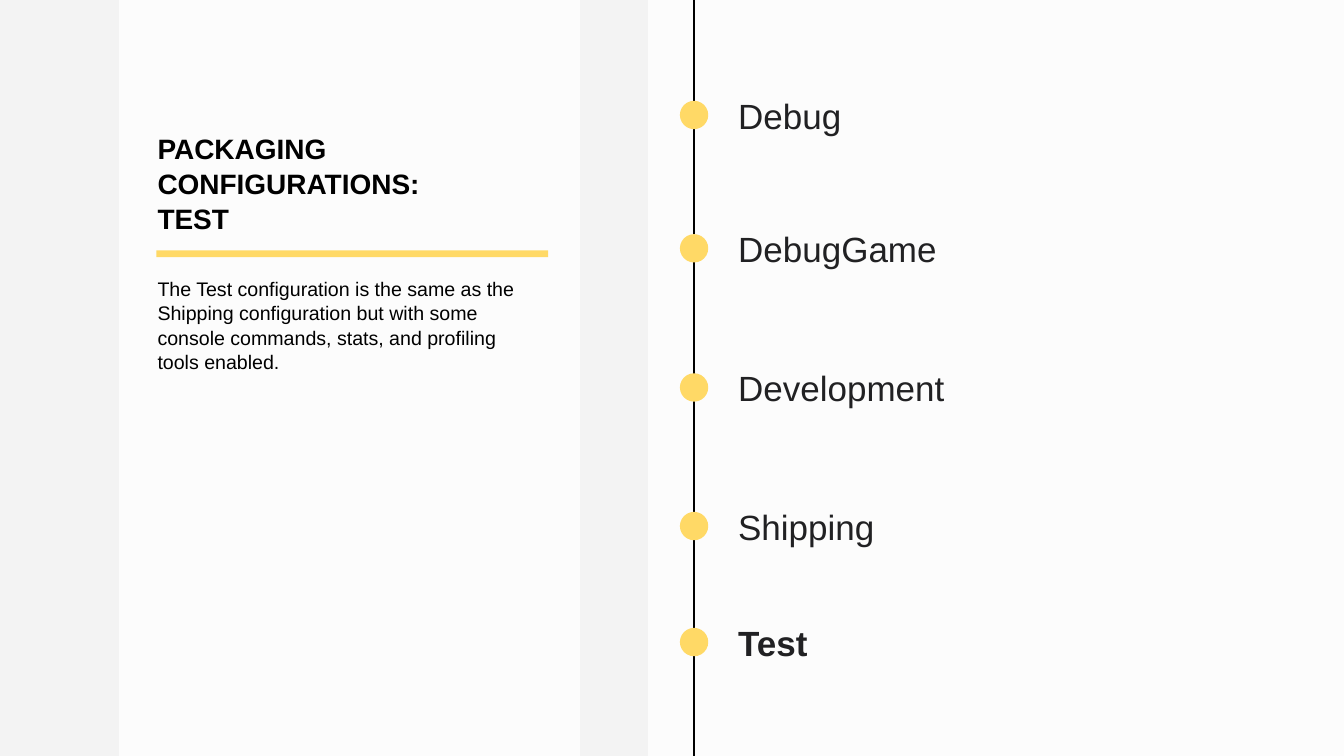
from lxml import etree
from pptx import Presentation
from pptx.dml.color import RGBColor
from pptx.enum.shapes import MSO_CONNECTOR, MSO_SHAPE
from pptx.enum.text import MSO_ANCHOR, MSO_AUTO_SIZE, PP_ALIGN
from pptx.oxml.ns import qn
from pptx.util import Emu, Pt

EMU_PER_PX = 9525
SLIDE_WIDTH, SLIDE_HEIGHT = 2560, 1440
RECTANGLE, OVAL = MSO_SHAPE.RECTANGLE, MSO_SHAPE.OVAL
STRAIGHT = MSO_CONNECTOR.STRAIGHT
TOP, MIDDLE, BOTTOM = MSO_ANCHOR.TOP, MSO_ANCHOR.MIDDLE, MSO_ANCHOR.BOTTOM
NO_AUTOFIT = MSO_AUTO_SIZE.NONE
LEFT = PP_ALIGN.LEFT

BACKGROUND = RGBColor(0xF3, 0xF3, 0xF3)
WHITE = RGBColor(0xFF, 0xFF, 0xFF)
BLACK = RGBColor(0x00, 0x00, 0x00)
CHARCOAL = RGBColor(0x21, 0x21, 0x23)
YELLOW = RGBColor(0xFF, 0xD9, 0x66)

FONT = "Arial"
INSET = 6
PANEL_OPACITY = 80
TIMELINE_X = 1322
DOT_SIZE = 54
LABEL_LEFT, LABEL_WIDTH, LABEL_HEIGHT = 1400, 870, 91

TITLE_LINES = ["PACKAGING CONFIGURATIONS:", "TEST"]
DESCRIPTION = (
    "The Test configuration is the same as the Shipping configuration but "
    "with some console commands, stats, and profiling tools enabled."
)
CONFIGURATIONS = [
    ("Debug", 219),
    ("DebugGame", 473),
    ("Development", 738),
    ("Shipping", 1002),
    ("Test", 1223),
]
CURRENT_CONFIGURATION = "Test"


def px(length):
    return Emu(length * EMU_PER_PX)


def set_attributes(target, values):
    for name, value in values.items():
        setattr(target, name, value)


def place(shape, box):
    names = ("left", "top", "width", "height")
    set_attributes(shape, dict(zip(names, map(px, box))))


def write_text(shape, lines, size, color, anchor, bold=False, spacing=1.0):
    frame = shape.text_frame
    frame.text = "\n".join(lines)
    margins = ("margin_left", "margin_top", "margin_right", "margin_bottom")
    set_attributes(frame, dict.fromkeys(margins, px(INSET)))
    set_attributes(frame, {
        "word_wrap": True,
        "auto_size": NO_AUTOFIT,
        "vertical_anchor": anchor,
    })
    for paragraph in frame.paragraphs:
        set_attributes(paragraph, {
            "alignment": LEFT,
            "line_spacing": spacing,
            "space_before": Pt(0),
            "space_after": Pt(0),
        })
        for run in paragraph.runs:
            set_attributes(run.font, {"name": FONT, "size": Pt(size), "bold": bold})
            run.font.color.rgb = color


def remove_bullets(shape):
    for paragraph in shape.text_frame.paragraphs:
        properties = paragraph._p.get_or_add_pPr()
        set_attributes_xml = {"marL": "0", "indent": "0"}
        for name, value in set_attributes_xml.items():
            properties.set(name, value)
        etree.SubElement(properties, qn("a:buNone"))


def add_filled_shape(slide, kind, box, color):
    shape = slide.shapes.add_shape(kind, *map(px, box))
    shape.shadow.inherit = False
    shape.fill.solid()
    shape.fill.fore_color.rgb = color
    shape.line.fill.background()
    return shape


def add_panel(slide, left, width):
    panel = add_filled_shape(slide, RECTANGLE, (left, 0, width, SLIDE_HEIGHT), WHITE)
    color = panel._element.spPr.find(f"{qn('a:solidFill')}/{qn('a:srgbClr')}")
    etree.SubElement(color, qn("a:alpha"), val=str(PANEL_OPACITY * 1000))
    slide.shapes._spTree.insert(2, panel._element)


def add_timeline(slide):
    line = slide.shapes.add_connector(
        STRAIGHT, px(TIMELINE_X), px(0), px(TIMELINE_X), px(SLIDE_HEIGHT)
    )
    line.line.color.rgb = BLACK
    line.line.width = Pt(2)
    etree.SubElement(line._element.spPr, qn("a:effectLst"))


def add_configuration(slide, name, center):
    dot_left, dot_top = TIMELINE_X - DOT_SIZE // 2, center - DOT_SIZE // 2
    add_filled_shape(slide, OVAL, (dot_left, dot_top, DOT_SIZE, DOT_SIZE), YELLOW)
    box = (LABEL_LEFT, center - LABEL_HEIGHT // 2, LABEL_WIDTH, LABEL_HEIGHT)
    label = slide.shapes.add_textbox(*map(px, box))
    write_text(label, [name], 50, CHARCOAL, MIDDLE, bold=name == CURRENT_CONFIGURATION)


def add_description(slide):
    title, body = slide.placeholders
    place(title, (294, 250, 760, 204))
    write_text(title, TITLE_LINES, 40, BLACK, BOTTOM, bold=True, spacing=1.04)
    place(body, (294, 519, 744, 192))
    write_text(body, [DESCRIPTION], 28, BLACK, TOP, spacing=1.04)
    remove_bullets(body)
    add_filled_shape(slide, RECTANGLE, (298, 477, 746, 13), YELLOW)


def main():
    presentation = Presentation()
    presentation.slide_width = px(SLIDE_WIDTH)
    presentation.slide_height = px(SLIDE_HEIGHT)
    slide = presentation.slides.add_slide(presentation.slide_layouts[1])
    slide.background.fill.solid()
    slide.background.fill.fore_color.rgb = BACKGROUND
    add_panel(slide, 227, 878)
    add_panel(slide, 1234, 1326)
    add_description(slide)
    add_timeline(slide)
    for name, center in CONFIGURATIONS:
        add_configuration(slide, name, center)
    presentation.save("out.pptx")


if __name__ == "__main__":
    main()
